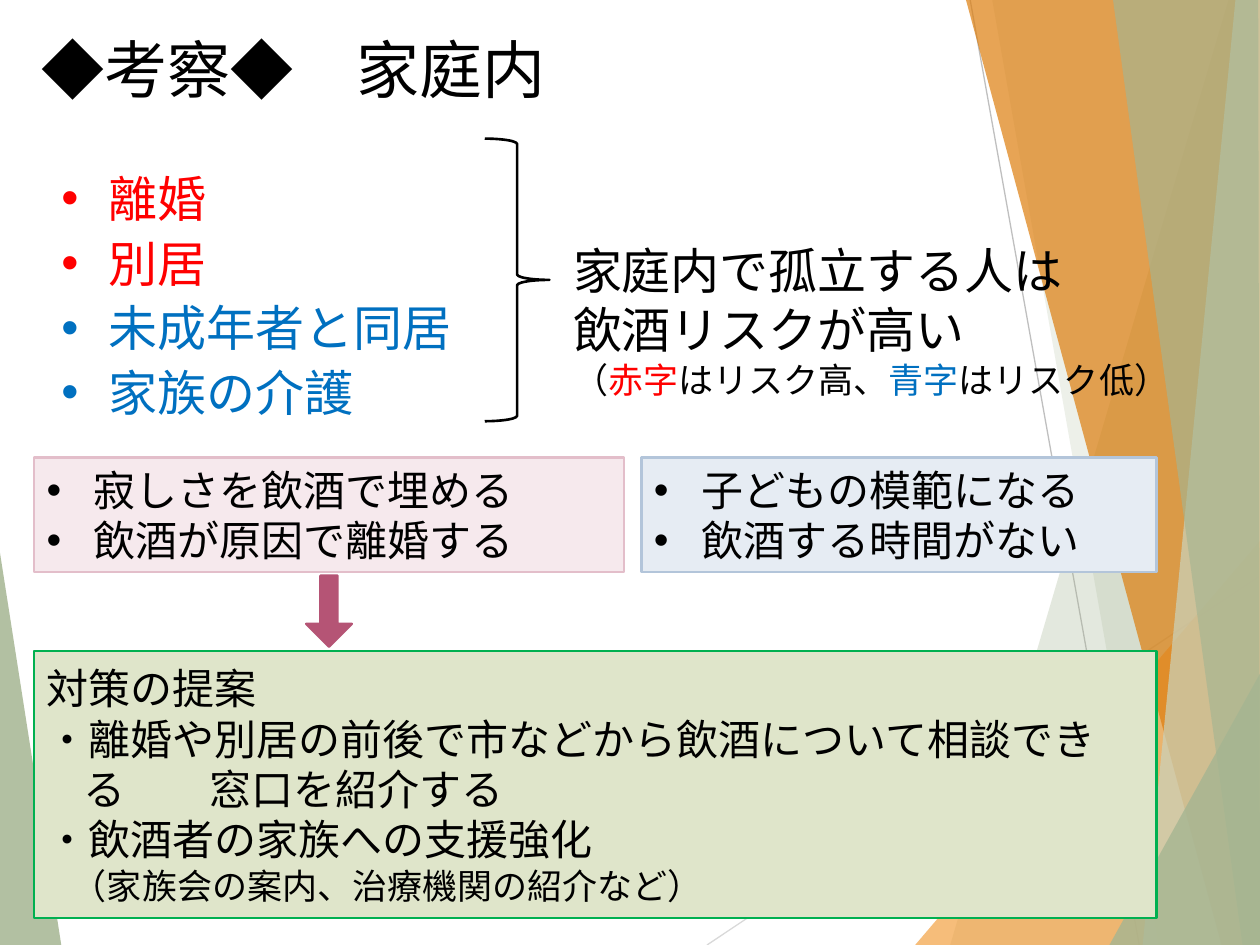
"""Builds a one-slide deck on drinking risk within the household."""
import pptx
import pptx.util
import pptx.dml.color
import pptx.enum.shapes
import pptx.enum.text
import pptx.oxml.ns
from lxml import etree

Pt = pptx.util.Pt
RGBColor = pptx.dml.color.RGBColor
SHAPE = pptx.enum.shapes.MSO_SHAPE
ANCHOR = pptx.enum.text.MSO_ANCHOR
qn = pptx.oxml.ns.qn

FONT = "Lato"
BLACK = RGBColor(0x00, 0x00, 0x00)
RED = RGBColor(0xFF, 0x00, 0x00)
BLUE = RGBColor(0x00, 0x70, 0xC0)
SAGE = RGBColor(0xA5, 0xB5, 0x92)
PALE_SAGE = RGBColor(0xC9, 0xD3, 0xBE)
ORANGE = RGBColor(0xF3, 0xA4, 0x47)
DARK_ORANGE = RGBColor(0xDD, 0x7E, 0x0E)
LIGHT_GRAY = RGBColor(0xD9, 0xD9, 0xD9)
GRAY = RGBColor(0xBF, 0xBF, 0xBF)
PINK_FILL = RGBColor(0xF6, 0xE9, 0xED)
PINK_LINE = RGBColor(0xE3, 0xBE, 0xCA)
BLUE_FILL = RGBColor(0xE6, 0xEC, 0xF3)
BLUE_LINE = RGBColor(0xB3, 0xC5, 0xDA)
GREEN_FILL = RGBColor(0xDF, 0xE5, 0xCA)
GREEN_LINE = RGBColor(0x00, 0xB0, 0x50)
ROSE = RGBColor(0xB5, 0x54, 0x75)


def write(shape, paragraphs, anchor=ANCHOR.TOP):
    """Fill a shape with (runs, left margin, first indent, bullet, spacing) paragraphs."""
    frame = shape.text_frame
    frame.word_wrap = True
    frame.vertical_anchor = anchor
    for index, (runs, margin, indent, bullet, spacing) in enumerate(paragraphs):
        para = frame.paragraphs[0] if index == 0 else frame.add_paragraph()
        para.alignment = pptx.enum.text.PP_ALIGN.LEFT
        if spacing:
            para.line_spacing = Pt(spacing)
        properties = para._p.get_or_add_pPr()
        properties.set("marL", str(Pt(margin)))
        properties.set("indent", str(Pt(indent)))
        if bullet:
            etree.SubElement(properties, qn("a:buFont")).set("typeface", "Arial")
            etree.SubElement(properties, qn("a:buChar")).set("char", "•")
        for text, size, color in runs:
            span = para.add_run()
            span.text = text
            span.font.size = Pt(size)
            span.font.name = FONT
            span.font.color.rgb = color
            etree.SubElement(span._r.get_or_add_rPr(), qn("a:ea")).set("typeface", FONT)


def style(shape, fill, line):
    """Give a shape a flat fill and an optional outline."""
    shape.shadow.inherit = False
    if fill is None:
        shape.fill.background()
    else:
        shape.fill.solid()
        shape.fill.fore_color.rgb = fill
    if line is None:
        shape.line.fill.background()
    else:
        shape.line.color.rgb = line
        shape.line.width = Pt(1.5)


deck = pptx.Presentation()
deck.slide_width, deck.slide_height = Pt(720), Pt(540)
page = deck.slides.add_slide(deck.slide_layouts[5])
shapes = page.shapes

for start, end, color in [
    ((404, 540), (720, 329), LIGHT_GRAY),
    ((554.4, 0), (651, 540), GRAY),
]:
    ray = shapes.add_connector(
        pptx.enum.shapes.MSO_CONNECTOR.STRAIGHT, *[Pt(value) for value in start + end])
    ray.line.color.rgb = color
    ray.line.width = Pt(0.75)
    etree.SubElement(ray._element.spPr, qn("a:effectLst"))

facets = [
    ([(0, 316), (35.3, 540), (0, 540)], SAGE, 85),
    ([(702, 0), (543, 540), (720, 540), (720, 0)], SAGE, 30),
    ([(567.4, 0), (661.7, 540), (720, 540), (720, 0)], SAGE, 20),
    ([(522.7, 540), (720, 309), (720, 540)], ORANGE, 72),
    ([(552.2, 0), (698.4, 540), (720, 540), (720, 0)], DARK_ORANGE, 70),
    ([(706.3, 0), (653, 540), (720, 540), (720, 0)], PALE_SAGE, 70),
    ([(635.8, 0), (710, 540), (720, 540), (718.6, 0)], SAGE, 65),
    ([(634.3, 540), (720, 385.2), (720, 540)], SAGE, 80),
]
for points, color, opacity in facets:
    builder = shapes.build_freeform(*points[0], scale=Pt(1))
    builder.add_line_segments(points[1:], close=True)
    facet = builder.convert_to_shape()
    style(facet, color, None)
    tint = facet._element.spPr.find(qn("a:solidFill"))[0]
    etree.SubElement(tint, qn("a:alpha")).set("val", str(opacity * 1000))

title = shapes.title
title.left, title.top, title.width, title.height = Pt(16.6), Pt(13.7), Pt(501), Pt(51)
write(title, [([("◆考察◆　家庭内", 36, BLACK)], 0, 0, False, None)])

factors = shapes.add_textbox(Pt(28), Pt(89.3), Pt(260), Pt(194.4))
write(factors, [
    ([(text, 28, color)], 27, -27, True, 37)
    for text, color in [
        ("離婚", RED), ("別居", RED), ("未成年者と同居", BLUE), ("家族の介護", BLUE)]
])

for left, width, fill, line, reasons in [
    (366.5, 294.5, BLUE_FILL, BLUE_LINE, ["子どもの模範になる", "飲酒する時間がない"]),
    (19.5, 337, PINK_FILL, PINK_LINE, ["寂しさを飲酒で埋める", "飲酒が原因で離婚する"]),
]:
    reason_box = shapes.add_shape(SHAPE.RECTANGLE, Pt(left), Pt(261.4), Pt(width), Pt(65.4))
    style(reason_box, fill, line)
    write(reason_box, [([(text, 24, BLACK)], 27, -27, True, None) for text in reasons],
          ANCHOR.MIDDLE)

arrow = shapes.add_shape(SHAPE.DOWN_ARROW, Pt(175), Pt(329), Pt(26), Pt(40.5))
arrow.adjustments[0] = 0.37
style(arrow, ROSE, ROSE)

conclusion = shapes.add_textbox(Pt(320.4), Pt(134), Pt(381.6), Pt(99.4))
legend = [
    ("（", 20, BLACK), ("赤字", 20, RED), ("はリスク高、", 20, BLACK),
    ("青字", 20, BLUE), ("はリスク低）", 20, BLACK),
]
write(conclusion, [
    ([("家庭内で孤立する人は", 28, BLACK)], 0, 0, False, None),
    ([("飲酒リスクが高い", 28, BLACK)], 0, 0, False, None),
    (legend, 0, 0, False, None),
])

brace = shapes.add_shape(SHAPE.RIGHT_BRACE, Pt(277), Pt(79.2), Pt(37), Pt(161.5))
style(brace, None, BLACK)

proposal = shapes.add_shape(SHAPE.RECTANGLE, Pt(19.5), Pt(372), Pt(641.5), Pt(152.6))
style(proposal, GREEN_FILL, GREEN_LINE)
write(proposal, [
    ([("対策の提案", 24, BLACK)], 0, 0, False, None),
    ([("・離婚や別居の前後で市などから飲酒について相談できる　　窓口を紹介する", 24, BLACK)],
     21, -21, False, None),
    ([("・飲酒者の家族への支援強化", 24, BLACK)], 0, 0, False, None),
    ([("（家族会の案内、治療機関の紹介など）", 20, BLACK)], 21, -6.5, False, None),
], ANCHOR.MIDDLE)

deck.save("out.pptx")
